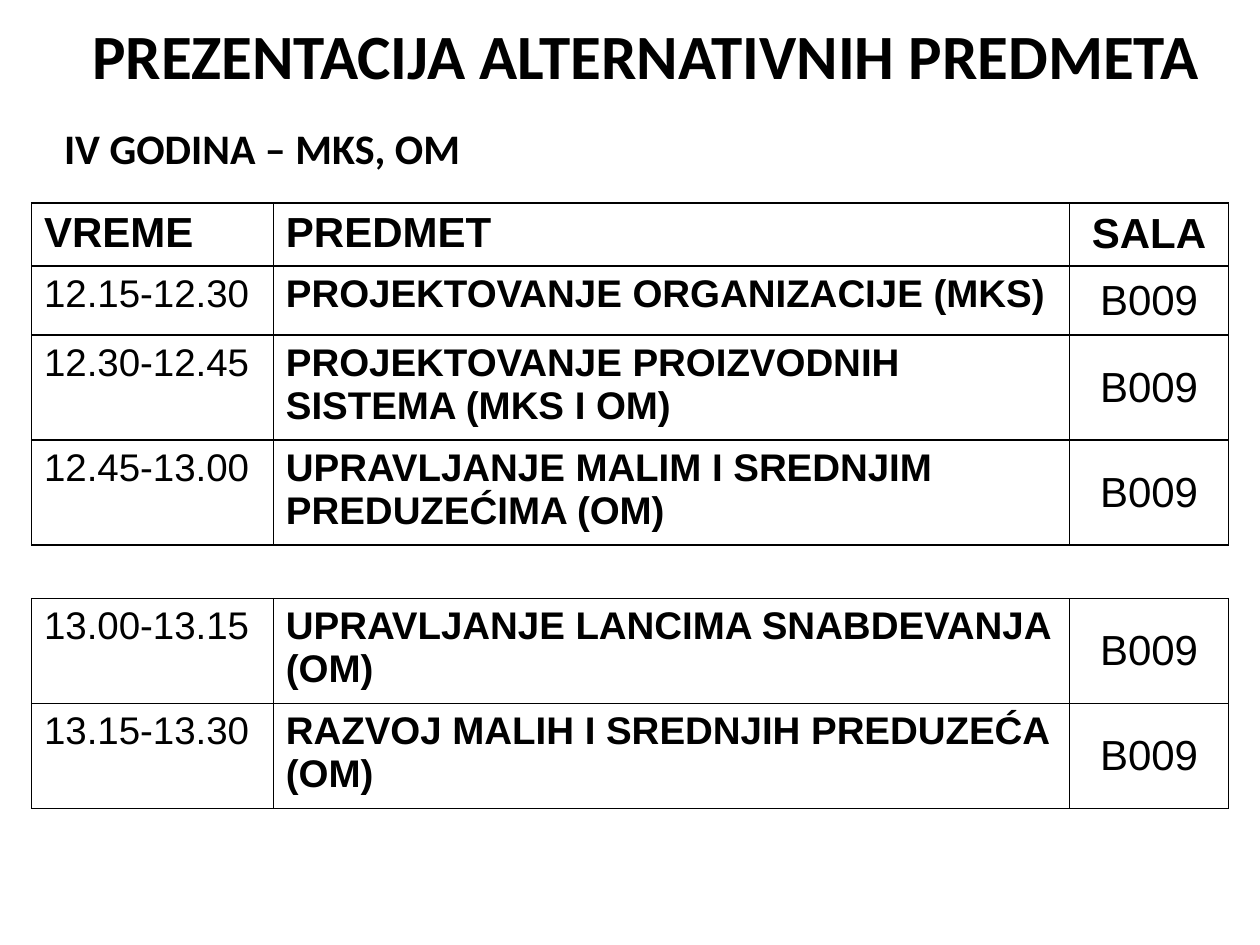
from lxml.etree import SubElement as Sub
from pptx import Presentation
from pptx.dml.color import RGBColor as Rgb
from pptx.enum.text import MSO_ANCHOR as Anchor, PP_ALIGN as Align
from pptx.oxml.ns import qn
from pptx.util import Inches, Pt

HUES = {"ink": "000000", "page": "FFFFFF"}
COLS = (1.92, 6.32, 1.26)
HEAD = ("VREME", "PREDMET", "SALA")
EARLY = (
    ("12.15-12.30", "PROJEKTOVANJE ORGANIZACIJE (MKS)", "B009"),
    ("12.30-12.45", "PROJEKTOVANJE PROIZVODNIH SISTEMA (MKS I OM)", "B009"),
    ("12.45-13.00", "UPRAVLJANJE MALIM I SREDNJIM PREDUZEĆIMA (OM)", "B009"),
)
LATE = (
    ("13.00-13.15", "UPRAVLJANJE LANCIMA SNABDEVANJA (OM)", "B009"),
    ("13.15-13.30", "RAZVOJ MALIH I SREDNJIH PREDUZEĆA (OM)", "B009"),
)


def write(frame, text, size, face, bold, align=Align.LEFT):
    para = frame.paragraphs[0]
    para.alignment = align
    run = para.add_run()
    run.text = text
    font = run.font
    font.size, font.name, font.bold = Pt(size), face, bold
    font.color.rgb = Rgb.from_string(HUES["ink"])


def label(slide, box, text, size, align=Align.LEFT, anchor=Anchor.TOP):
    frame = slide.shapes.add_textbox(*map(Inches, box)).text_frame
    frame.word_wrap = True
    frame.vertical_anchor = anchor
    write(frame, text, size, "Calibri", True, align)


def border(cell):
    props = cell._tc.get_or_add_tcPr()
    for spot, side in enumerate(("lnL", "lnR", "lnT", "lnB")):
        line = Sub(props, qn(f"a:{side}"), w=str(Pt(1)))
        props.insert(spot, line)
        fill = Sub(line, qn("a:solidFill"))
        Sub(fill, qn("a:srgbClr"), val=HUES["ink"])


def grid(slide, box, rows):
    shape = slide.shapes.add_table(len(rows), len(COLS), *map(Inches, box))
    table = shape.table
    table.first_row = table.horz_banding = False
    for col, width in zip(table.columns, COLS):
        col.width = Inches(width)
    for line, row in zip(table.rows, rows):
        head = row is HEAD
        line.height = Inches(0.5 if head else 0.55)
        for spot, (cell, text) in enumerate(zip(line.cells, row)):
            room = spot == 2
            cell.fill.solid()
            cell.fill.fore_color.rgb = Rgb.from_string(HUES["page"])
            cell.vertical_anchor = Anchor.MIDDLE if room else Anchor.TOP
            write(cell.text_frame, text, 24 if head or room else 22, "Arial",
                  head or spot == 1, Align.CENTER if room else Align.LEFT)
            border(cell)


def main():
    deck = Presentation()
    deck.slide_width, deck.slide_height = Inches(10), Inches(7.5)
    slide = deck.slides.add_slide(deck.slide_layouts[6])
    label(slide, (0, -0.42, 10.25, 1.7), "PREZENTACIJA ALTERNATIVNIH PREDMETA",
          36, Align.CENTER, Anchor.MIDDLE)
    label(slide, (0.41, 0.92, 5.42, 0.91), "IV GODINA – MKS, OM", 24)
    grid(slide, (0.25, 1.61, 9.5, 2.71), (HEAD, *EARLY))
    grid(slide, (0.25, 4.75, 9.5, 1.67), LATE)
    deck.save("out.pptx")


if __name__ == "__main__":
    main()
